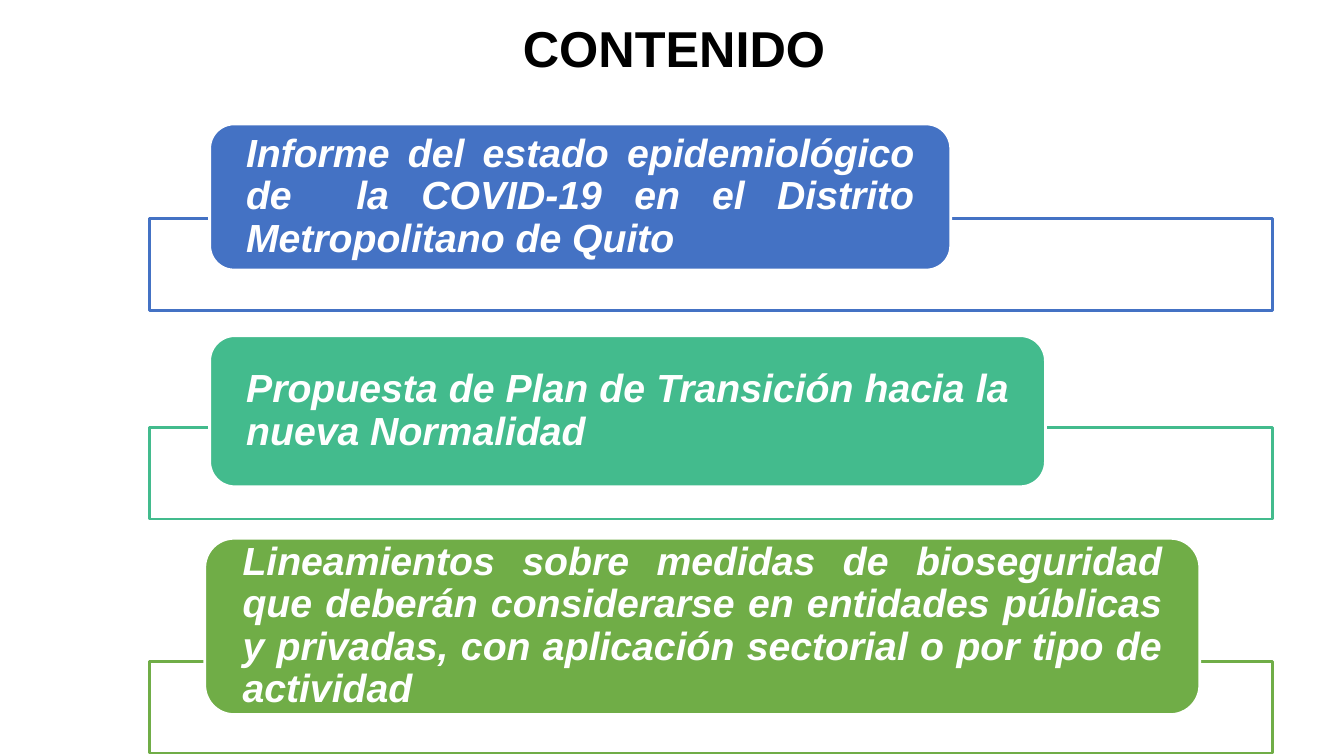
"""Build the contents slide with three framed topic cards."""
import pptx
import pptx.dml.color
import pptx.enum.shapes
import pptx.enum.text
import pptx.oxml.ns
import pptx.util
from lxml import etree

RGBColor = pptx.dml.color.RGBColor
Shape = pptx.enum.shapes.MSO_SHAPE
Align = pptx.enum.text.PP_ALIGN
Anchor = pptx.enum.text.MSO_ANCHOR

BLUE = RGBColor(0x44, 0x72, 0xC4)
TEAL = RGBColor(0x43, 0xBB, 0x8D)
GREEN = RGBColor(0x70, 0xAD, 0x47)
WHITE = RGBColor(0xFF, 0xFF, 0xFF)
BLACK = RGBColor(0x00, 0x00, 0x00)

SLIDE_WIDTH = pptx.util.Inches(13.33)
SLIDE_HEIGHT = pptx.util.Inches(7.5)
FRAME_LEFT, FRAME_WIDTH, FRAME_HEIGHT = 11.1, 83.57, 12.13

TOPICS = [
    ("Informe del estado epidemiológico de  la COVID-19 en el Distrito Metropolitano de Quito",
     BLUE, 28.93, (15.6, 16.4, 55.14, 19.33)),
    ("Propuesta de Plan de Transición hacia la nueva Normalidad",
     TEAL, 56.53, (15.6, 44.4, 62.19, 20)),
    ("Lineamientos sobre medidas de bioseguridad que deberán considerarse en entidades "
     "públicas y privadas, con aplicación sectorial o por tipo de actividad",
     GREEN, 87.47, (15.23, 71.2, 74.04, 23.33)),
]


def place(left, top, width, height):
    """Turn percentages of the slide into lengths."""
    return (int(SLIDE_WIDTH * left / 100), int(SLIDE_HEIGHT * top / 100),
            int(SLIDE_WIDTH * width / 100), int(SLIDE_HEIGHT * height / 100))


def write(frame, wording, size, color, alignment, italic=False):
    """Put one bold Arial paragraph into a text frame."""
    frame.word_wrap = True
    paragraph = frame.paragraphs[0]
    paragraph.text = wording
    paragraph.alignment = alignment
    font = paragraph.runs[0].font
    font.name = "Arial"
    font.size = pptx.util.Pt(size)
    font.bold = True
    font.italic = italic
    font.color.rgb = color
    return paragraph


def add_panel(slide, preset, area, fill, line):
    """Add a filled and outlined shape."""
    panel = slide.shapes.add_shape(preset, *place(*area))
    panel.shadow.inherit = False
    panel.fill.solid()
    panel.fill.fore_color.rgb = fill
    panel.line.color.rgb = line
    panel.line.width = pptx.util.Pt(2)
    return panel


def add_frame(slide, top, color):
    """Add the translucent outlined band behind a card."""
    area = (FRAME_LEFT, top, FRAME_WIDTH, FRAME_HEIGHT)
    band = add_panel(slide, Shape.RECTANGLE, area, WHITE, color)
    qn = pptx.oxml.ns.qn
    fill_color = band.fill._xPr.find(qn("a:solidFill")).find(qn("a:srgbClr"))
    etree.SubElement(fill_color, qn("a:alpha"), val="90000")


def add_card(slide, wording, color, area):
    """Add a rounded card with its topic."""
    card = add_panel(slide, Shape.ROUNDED_RECTANGLE, area, color, WHITE)
    frame = card.text_frame
    frame.margin_left = frame.margin_right = pptx.util.Inches(0.29)
    frame.margin_top = frame.margin_bottom = 0
    frame.vertical_anchor = Anchor.MIDDLE
    topic = write(frame, wording, 28, WHITE, Align.JUSTIFY, italic=True)
    topic.line_spacing = 0.9


def add_title(slide, wording):
    """Add the centred heading."""
    heading = slide.shapes.add_textbox(*place(8.93, 1.6, 82.45, 17.47))
    write(heading.text_frame, wording, 36, BLACK, Align.CENTER)


def main():
    """Assemble and save the slide."""
    deck = pptx.Presentation()
    deck.slide_width, deck.slide_height = SLIDE_WIDTH, SLIDE_HEIGHT
    slide = deck.slides.add_slide(deck.slide_layouts[6])
    for wording, color, frame_top, card_area in TOPICS:
        add_frame(slide, frame_top, color)
        add_card(slide, wording, color, card_area)
    add_title(slide, "CONTENIDO")
    deck.save("out.pptx")


if __name__ == "__main__":
    main()
